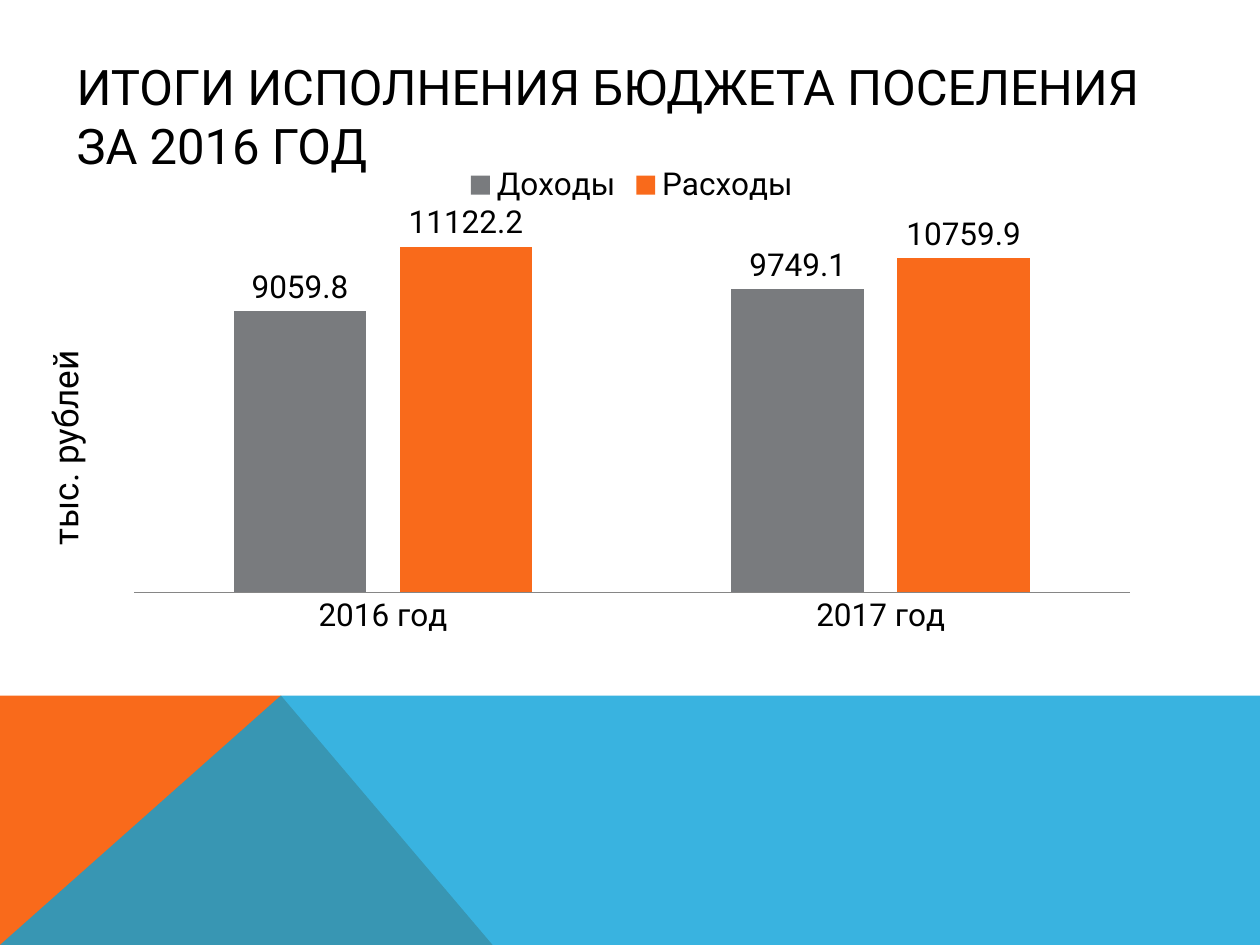
from dataclasses import dataclass

from lxml import etree
from pptx import Presentation
from pptx.chart.data import CategoryChartData
from pptx.dml.color import RGBColor
from pptx.enum.chart import (XL_CHART_TYPE, XL_LABEL_POSITION,
                             XL_LEGEND_POSITION, XL_TICK_MARK)
from pptx.enum.text import MSO_ANCHOR
from pptx.oxml.ns import qn
from pptx.util import Inches, Pt


@dataclass(frozen=True)
class Theme:
    font: str = "Roboto"
    text: RGBColor = RGBColor(0x00, 0x00, 0x00)
    income: RGBColor = RGBColor(0x79, 0x7B, 0x7E)
    accent: RGBColor = RGBColor(0xF9, 0x6A, 0x1B)
    band: RGBColor = RGBColor(0x08, 0xA1, 0xD9)
    axis: RGBColor = RGBColor(0x86, 0x86, 0x86)
    title_size: int = 28
    unit_size: int = 20
    chart_size: int = 18


THEME = Theme()

YEARS = ["2016 год", "2017 год"]
BUDGET = [
    ("Доходы", [9059.8, 9749.1], THEME.income),
    ("Расходы", [11122.2, 10759.9], THEME.accent),
]


def style_font(font, size):
    font.name = THEME.font
    font.size = Pt(size)
    font.color.rgb = THEME.text


def add_text(slide, text, left, top, width, height, *, size,
             anchor=MSO_ANCHOR.TOP, rotation=0):
    box = slide.shapes.add_textbox(
        Inches(left), Inches(top), Inches(width), Inches(height))
    box.rotation = rotation
    frame = box.text_frame
    frame.word_wrap = True
    frame.vertical_anchor = anchor
    run = frame.paragraphs[0].add_run()
    run.text = text
    style_font(run.font, size)


def add_polygon(slide, points, color, opacity=100):
    start, *rest = [(Inches(x), Inches(y)) for x, y in points]
    builder = slide.shapes.build_freeform(*start)
    builder.add_line_segments(rest, close=True)
    polygon = builder.convert_to_shape()
    polygon.shadow.inherit = False
    polygon.fill.solid()
    polygon.fill.fore_color.rgb = color
    polygon.line.fill.background()
    if opacity < 100:
        rgb = polygon.fill._xPr.find(qn("a:solidFill")).find(qn("a:srgbClr"))
        etree.SubElement(rgb, qn("a:alpha"), val=str(opacity * 1000))


def add_budget_chart(slide, left, top, width, height):
    data = CategoryChartData(number_format="General")
    data.categories = YEARS
    for name, values, _ in BUDGET:
        data.add_series(name, values)
    chart = slide.shapes.add_chart(
        XL_CHART_TYPE.COLUMN_CLUSTERED, Inches(left), Inches(top),
        Inches(width), Inches(height), data).chart
    style_font(chart.font, THEME.chart_size)
    chart.has_title = False

    # Legend
    chart.has_legend = True
    chart.legend.position = XL_LEGEND_POSITION.TOP
    chart.legend.include_in_layout = False

    # Axes
    years = chart.category_axis
    years.major_tick_mark = XL_TICK_MARK.NONE
    years.format.line.color.rgb = THEME.axis
    amounts = chart.value_axis
    amounts.visible = False
    amounts.has_major_gridlines = False
    amounts.minimum_scale = 0
    amounts.maximum_scale = 12000

    # Columns and their values
    plot = chart.plots[0]
    plot.gap_width = 150
    plot.overlap = -25
    plot.vary_by_categories = False
    for series, (_, _, color) in zip(plot.series, BUDGET):
        series.format.fill.solid()
        series.format.fill.fore_color.rgb = color
        labels = series.data_labels
        labels.show_value = True
        labels.position = XL_LABEL_POSITION.OUTSIDE_END


def main():
    prs = Presentation()
    prs.slide_width, prs.slide_height = Inches(10), Inches(7.5)
    slide = prs.slides.add_slide(prs.slide_layouts[6])

    # Bottom decoration
    band_top, bottom, peak = 5.52, 7.5, 2.23
    add_polygon(slide, [(0, bottom), (0, band_top), (peak, band_top),
                        (3.91, bottom)], THEME.accent)
    add_polygon(slide, [(0, bottom), (peak, band_top), (10, band_top),
                        (10, bottom)], THEME.band, opacity=80)

    # Title, chart and unit of measure
    add_text(slide, "ИТОГИ ИСПОЛНЕНИЯ БЮДЖЕТА ПОСЕЛЕНИЯ ЗА 2016 ГОД",
             0.51, 0.29, 9, 1.25, size=THEME.title_size,
             anchor=MSO_ANCHOR.MIDDLE)
    add_budget_chart(slide, 0.9, 1.2, 8.23, 3.91)
    add_text(slide, "тыс. рублей", -0.47, 3.22, 1.97, 0.44,
             size=THEME.unit_size, rotation=270)

    prs.save("out.pptx")


if __name__ == "__main__":
    main()
